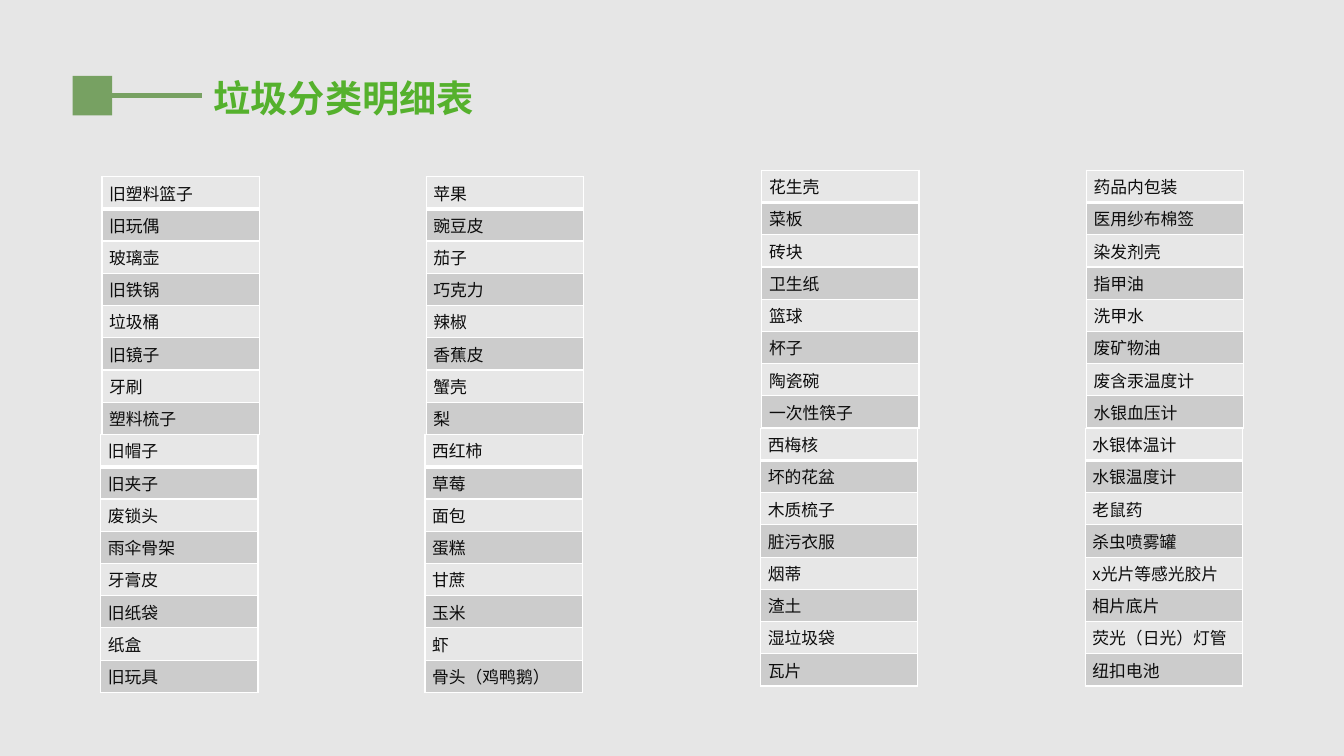
from dataclasses import dataclass

from lxml.etree import SubElement
from pptx import Presentation
from pptx.dml.color import RGBColor
from pptx.enum.shapes import MSO_CONNECTOR, MSO_SHAPE
from pptx.enum.text import MSO_ANCHOR, MSO_AUTO_SIZE, PP_ALIGN
from pptx.oxml import parse_xml
from pptx.oxml.ns import nsdecls, qn
from pptx.util import Cm, Pt

COLORS = {
    "background": "E6E6E6",
    "marker": "77A162",
    "title": "55B12D",
    "text": "0D0D0D",
    "light_row": "E7E7E7",
    "dark_row": "CCCCCC",
    "border": "FFFFFF",
}
FONT = "Noto Sans CJK SC"
TABLE_WIDTH, TABLE_HEIGHT = 3.96, 6.5
LOWER_SHIFT = -0.03
THIN, THICK = 1, 3

TITLE_FRAME = {
    "word_wrap": False,
    "auto_size": MSO_AUTO_SIZE.SHAPE_TO_FIT_TEXT,
    "vertical_anchor": MSO_ANCHOR.MIDDLE,
    "margin_left": Cm(0.25),
    "margin_right": Cm(0.25),
    "margin_top": 0,
    "margin_bottom": 0,
}
CELL_FORMAT = {
    "vertical_anchor": MSO_ANCHOR.MIDDLE,
    "margin_left": Cm(0.18),
    "margin_right": Cm(0.18),
    "margin_top": Cm(0.08),
    "margin_bottom": Cm(0.08),
}
TABLE_FORMAT = {"first_row": False, "horz_banding": False}


@dataclass
class WasteColumn:
    """Two stacked tables of waste items; left and top in centimetres."""
    left: float
    top: float
    upper: list[str]
    lower: list[str]


WASTE_COLUMNS = [
    WasteColumn(
        2.57, 4.45,
        ["旧塑料篮子", "旧玩偶", "玻璃壶", "旧铁锅", "垃圾桶", "旧镜子", "牙刷", "塑料梳子"],
        ["旧帽子", "旧夹子", "废锁头", "雨伞骨架", "牙膏皮", "旧纸袋", "纸盒", "旧玩具"],
    ),
    WasteColumn(
        10.74, 4.45,
        ["苹果", "豌豆皮", "茄子", "巧克力", "辣椒", "香蕉皮", "蟹壳", "梨"],
        ["西红柿", "草莓", "面包", "蛋糕", "甘蔗", "玉米", "虾", "骨头（鸡鸭鹅）"],
    ),
    WasteColumn(
        19.2, 4.29,
        ["花生壳", "菜板", "砖块", "卫生纸", "篮球", "杯子", "陶瓷碗", "一次性筷子"],
        ["西梅核", "坏的花盆", "木质梳子", "脏污衣服", "烟蒂", "渣土", "湿垃圾袋", "瓦片"],
    ),
    WasteColumn(
        27.38, 4.29,
        ["药品内包装", "医用纱布棉签", "染发剂壳", "指甲油", "洗甲水", "废矿物油",
         "废含汞温度计", "水银血压计"],
        ["水银体温计", "水银温度计", "老鼠药", "杀虫喷雾罐", "x光片等感光胶片", "相片底片",
         "荧光（日光）灯管", "纽扣电池"],
    ),
]


def rgb(name: str) -> RGBColor:
    return RGBColor.from_string(COLORS[name])


def apply_format(target, values: dict) -> None:
    for name, value in values.items():
        setattr(target, name, value)


def add_text(p, text: str, size: float, color: str, bold: bool = False) -> None:
    r = p.add_run()
    r.text = text
    apply_format(r.font, {"name": FONT, "size": Pt(size), "bold": bold})
    r.font.color.rgb = rgb(color)
    SubElement(r.font._element, qn("a:ea"), typeface=FONT)


def set_borders(cell, top: int, bottom: int) -> None:
    """Draw the four cell borders, with top and bottom widths in points."""
    widths = {"lnL": THIN, "lnR": THIN, "lnT": top, "lnB": bottom}
    tc_pr = cell._tc.get_or_add_tcPr()
    for i, (tag, width) in enumerate(widths.items()):
        tc_pr.insert(i, parse_xml(
            f'<a:{tag} {nsdecls("a")} w="{Pt(width)}"><a:solidFill>'
            f'<a:srgbClr val="{COLORS["border"]}"/></a:solidFill></a:{tag}>'))


def add_item_table(s, left: float, top: float, items: list[str]) -> None:
    table = s.shapes.add_table(len(items), 1, Cm(left), Cm(top),
                               Cm(TABLE_WIDTH), Cm(TABLE_HEIGHT)).table
    apply_format(table, TABLE_FORMAT)
    for i, item in enumerate(items):
        cell = table.cell(i, 0)
        apply_format(cell, CELL_FORMAT)
        cell.fill.solid()
        cell.fill.fore_color.rgb = rgb("dark_row" if i % 2 else "light_row")
        set_borders(cell, THICK if i == 1 else THIN, THICK if i == 0 else THIN)
        add_text(cell.text_frame.paragraphs[0], item, 12, "text")


def add_heading(s, text: str) -> None:
    square = s.shapes.add_shape(MSO_SHAPE.RECTANGLE, Cm(1.83), Cm(1.91), Cm(1), Cm(1))
    square.shadow.inherit = False
    square.fill.solid()
    square.fill.fore_color.rgb = rgb("marker")
    square.line.fill.background()

    middle = square.top + square.height // 2
    line = s.shapes.add_connector(MSO_CONNECTOR.STRAIGHT, square.left + square.width,
                                  middle, Cm(5.08), middle)
    line.begin_connect(square, 3)
    line.line.color.rgb = rgb("marker")
    line.line.width = Pt(4)
    SubElement(line._element.spPr, qn("a:effectLst"))

    title = s.shapes.title
    apply_format(title, {"left": Cm(5.13), "top": Cm(1.75),
                         "width": Cm(7.16), "height": Cm(1.4)})
    tf = title.text_frame
    apply_format(tf, TITLE_FRAME)
    p = tf.paragraphs[0]
    p.alignment = PP_ALIGN.LEFT
    add_text(p, text, 26.6, "title", bold=True)


def main() -> None:
    prs = Presentation()
    prs.slide_width, prs.slide_height = Cm(33.87), Cm(19.05)
    s = prs.slides.add_slide(prs.slide_layouts.get_by_name("Title Only"))
    s.background.fill.solid()
    s.background.fill.fore_color.rgb = rgb("background")
    add_heading(s, "垃圾分类明细表")
    for column in WASTE_COLUMNS:
        add_item_table(s, column.left, column.top, column.upper)
        add_item_table(s, column.left + LOWER_SHIFT, column.top + TABLE_HEIGHT, column.lower)
    prs.save("out.pptx")


if __name__ == "__main__":
    main()
